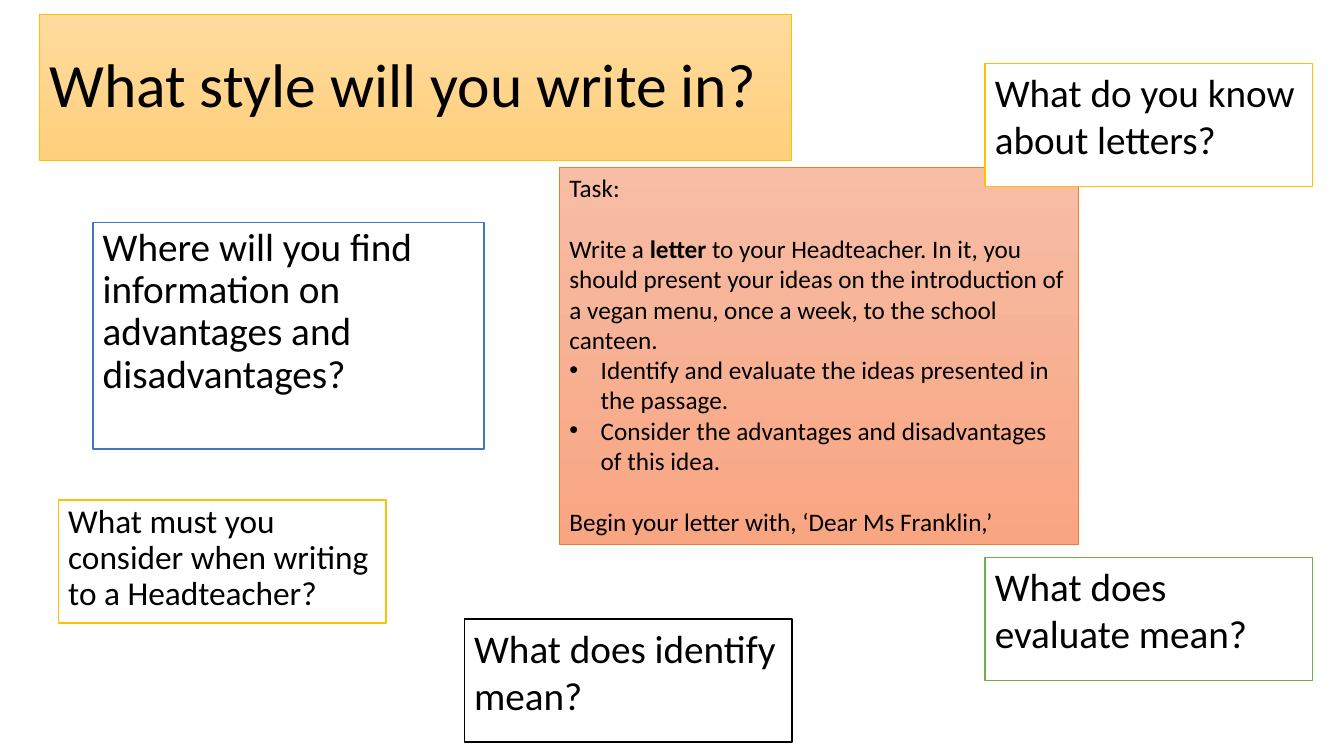
from pptx import Presentation
from pptx.dml.color import RGBColor
from pptx.enum.text import MSO_ANCHOR, MSO_AUTO_SIZE, PP_ALIGN
from pptx.oxml import parse_xml
from pptx.oxml.ns import nsdecls
from pptx.util import Cm, Pt

BLACK = RGBColor(0x00, 0x00, 0x00)
WHITE = RGBColor(0xFF, 0xFF, 0xFF)
BLUE = RGBColor(0x44, 0x72, 0xC4)
GOLD = RGBColor(0xFF, 0xC0, 0x00)
GREEN = RGBColor(0x70, 0xAD, 0x47)
ORANGE = RGBColor(0xED, 0x7D, 0x31)
SAND = (RGBColor(0xFF, 0xDB, 0x9E), RGBColor(0xFF, 0xD0, 0x7C))
PEACH = (RGBColor(0xF7, 0xBD, 0xA5), RGBColor(0xF8, 0xA5, 0x82))

NOTE = (8.26, 3.1)
GAP = Pt(22)


def place(shape, left, top, width, height):
    shape.left, shape.top = Cm(left), Cm(top)
    shape.width, shape.height = Cm(width), Cm(height)


def outline(shape, color, weight):
    shape.line.color.rgb = color
    shape.line.width = Pt(weight)


def shade(shape, colors):
    shape.fill.gradient()
    shape.fill.gradient_angle = 270
    for stop, color in zip(shape.fill.gradient_stops, colors):
        stop.color.rgb = color


def style(para, size):
    para.font.name = "Calibri"
    para.font.size = Pt(size)
    para.font.color.rgb = BLACK


def bullet(para):
    props = para._p.get_or_add_pPr()
    props.set("marL", str(Cm(0.79)))
    props.set("indent", str(Cm(-0.79)))
    props.append(parse_xml(f'<a:buFont {nsdecls("a")} typeface="Arial"/>'))
    props.append(parse_xml(f'<a:buChar {nsdecls("a")} char="•"/>'))


def add_title(slide, text):
    title = slide.shapes.title
    place(title, 0.99, 0.36, 18.95, 3.68)
    shade(title, SAND)
    outline(title, GOLD, 0.5)
    frame = title.text_frame
    frame.text = text
    frame.auto_size = MSO_AUTO_SIZE.NONE
    frame.vertical_anchor = MSO_ANCHOR.MIDDLE
    para = frame.paragraphs[0]
    para.alignment = PP_ALIGN.LEFT
    para.line_spacing = 0.9
    style(para, 44)


def add_box(slide, left, top, width, height):
    box = slide.shapes.add_textbox(Cm(left), Cm(top), Cm(width), Cm(height))
    box.text_frame.word_wrap = True
    return box


def add_note(slide, text, spot, color, area=NOTE, size=28, spacing=1.0):
    box = add_box(slide, *spot, *area)
    box.fill.solid()
    box.fill.fore_color.rgb = WHITE
    outline(box, color, 1)
    para = box.text_frame.paragraphs[0]
    para.text = text
    para.line_spacing = spacing
    style(para, size)


def add_task(slide):
    box = add_box(slide, 14.1, 4.22, 13.08, 9.5)
    shade(box, PEACH)
    outline(box, ORANGE, 0.5)
    frame = box.text_frame
    frame.auto_size = MSO_AUTO_SIZE.SHAPE_TO_FIT_TEXT

    head = frame.paragraphs[0]
    head.text = "Task:"

    brief = frame.add_paragraph()
    brief.space_before = GAP
    brief.add_run().text = "Write a "
    key = brief.add_run()
    key.text = "letter "
    key.font.bold = True
    brief.add_run().text = (
        "to your Headteacher. In it, you should present your ideas on the "
        "introduction of a vegan menu, once a week, to the school canteen."
    )

    for text in (
        "Identify and evaluate the ideas presented in the passage.",
        "Consider the advantages and disadvantages of this idea.",
    ):
        point = frame.add_paragraph()
        point.text = text
        bullet(point)

    close = frame.add_paragraph()
    close.text = "Begin your letter with, ‘Dear Ms Franklin,’"
    close.space_before = GAP

    for para in frame.paragraphs:
        style(para, 18)


def main():
    deck = Presentation()
    deck.slide_width, deck.slide_height = Cm(33.87), Cm(19.05)
    slide = deck.slides.add_slide(deck.slide_layouts[5])

    add_title(slide, "What style will you write in?")
    add_note(
        slide,
        "Where will you find information on advantages and disadvantages?",
        (2.34, 5.6), BLUE, area=(9.86, 5.72), spacing=0.9,
    )
    add_task(slide)
    add_note(slide, "What does identify mean?", (11.7, 15.6), BLACK)
    add_note(slide, "What does evaluate mean?", (24.82, 14.05), GREEN)
    add_note(slide, "What do you know about letters?", (24.82, 1.6), GOLD)
    add_note(
        slide,
        "What must you consider when writing to a Headteacher?",
        (1.47, 12.6), GOLD, size=23.8, spacing=0.9,
    )

    deck.save("out.pptx")


if __name__ == "__main__":
    main()
